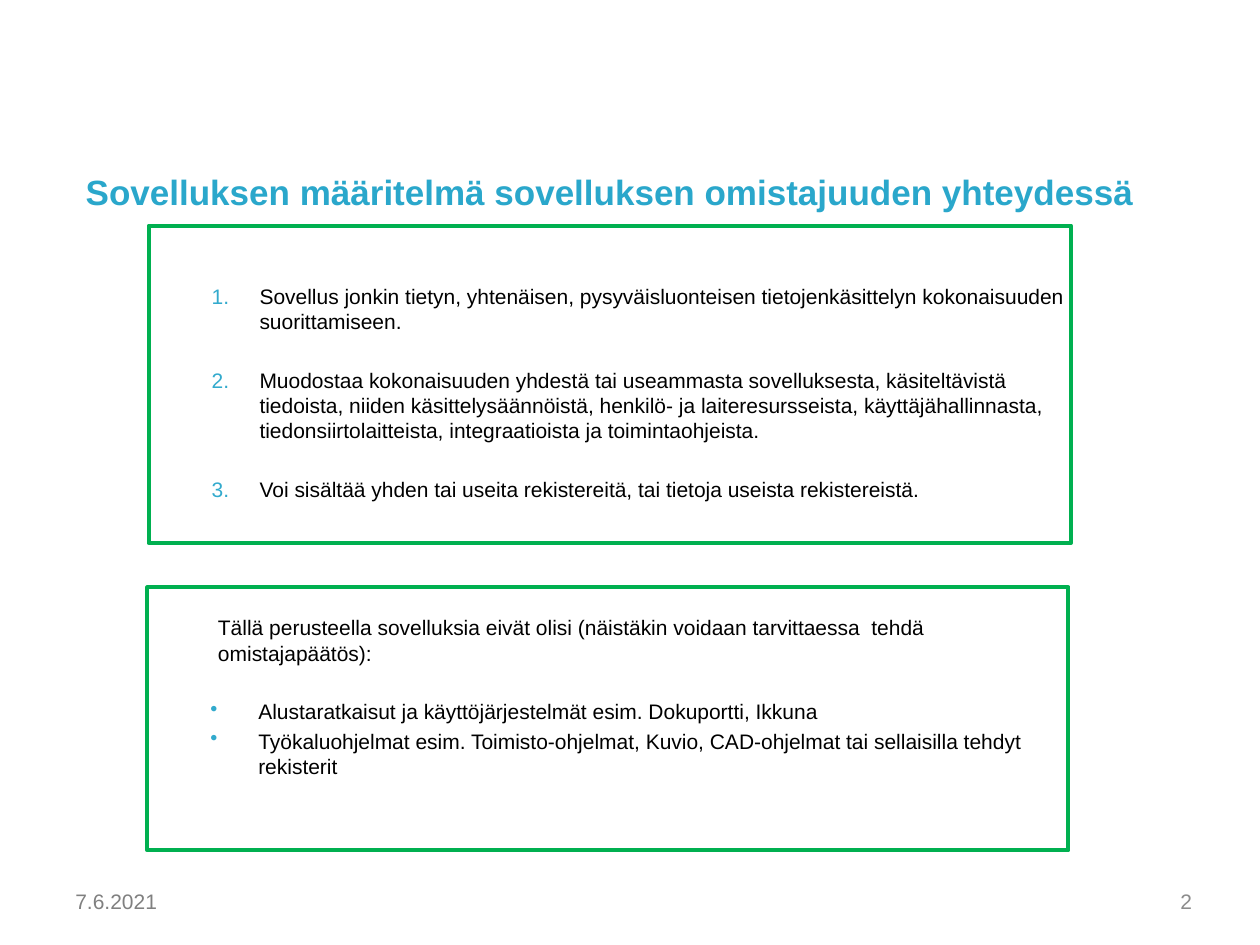
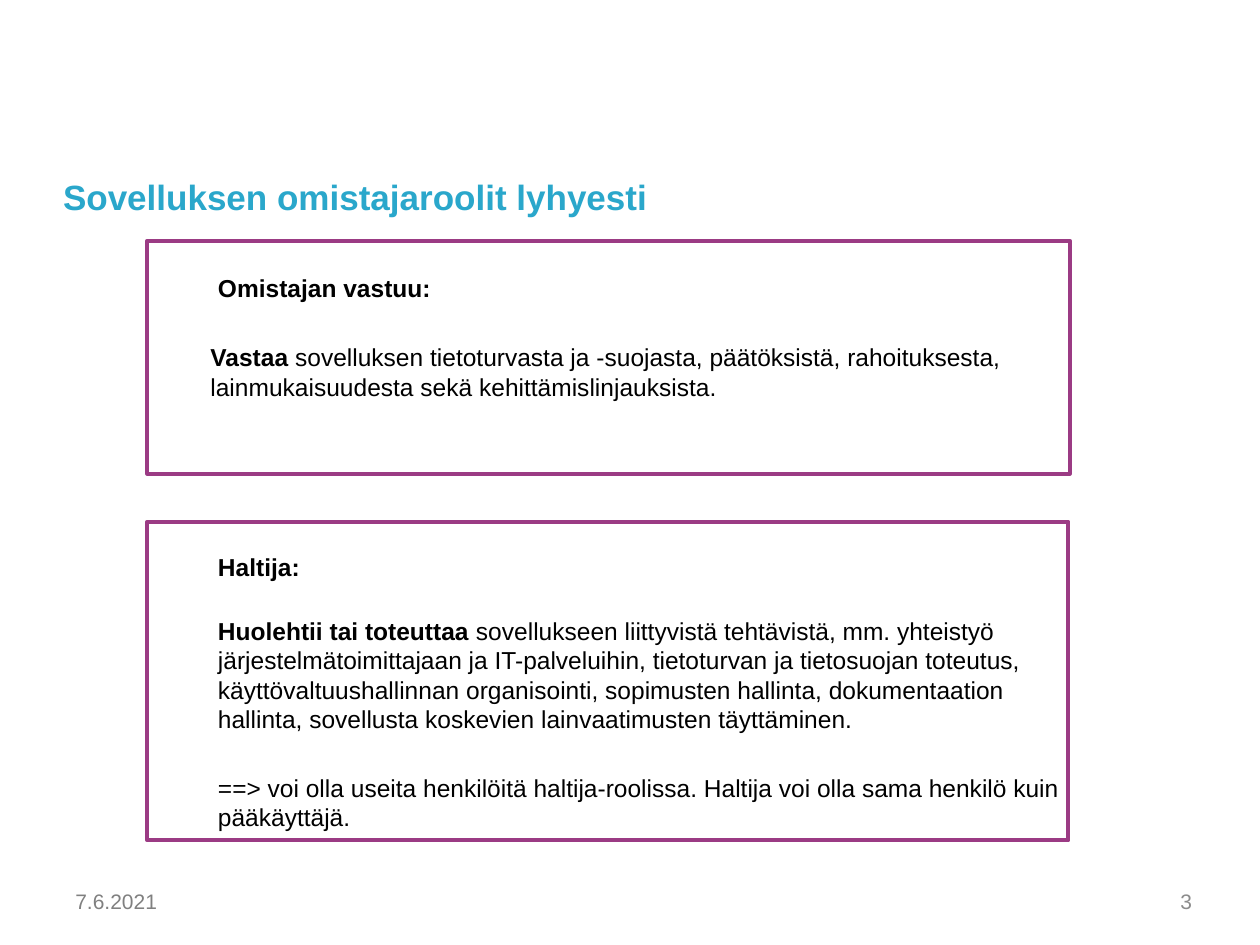
from lxml import etree
from pptx import Presentation
from pptx.dml.color import RGBColor
from pptx.enum.shapes import MSO_SHAPE
from pptx.enum.text import MSO_ANCHOR, MSO_AUTO_SIZE, PP_ALIGN
from pptx.oxml.ns import qn
from pptx.util import Inches, Pt

RECTANGLE = MSO_SHAPE.RECTANGLE
TOP, MIDDLE = MSO_ANCHOR.TOP, MSO_ANCHOR.MIDDLE
LEFT, RIGHT = PP_ALIGN.LEFT, PP_ALIGN.RIGHT
NO_AUTOFIT = MSO_AUTO_SIZE.NONE

TITLE_BLUE = RGBColor(0x2A, 0xA7, 0xCB)
MARKER_BLUE = RGBColor(0x32, 0xAA, 0xCD)
GREEN = RGBColor(0x00, 0xB0, 0x50)
PURPLE = RGBColor(0x9B, 0x3B, 0x84)
BLACK = RGBColor(0x00, 0x00, 0x00)
DATE_GREY = RGBColor(0x80, 0x80, 0x80)
NUMBER_GREY = RGBColor(0x8C, 0x8C, 0x8C)

FONT = "Arial"
DATE = "7.6.2021"

# Marker kinds: element name and its attributes
NUMBERED = ("a:buAutoNum", {"type": "arabicPeriod"})
BULLETED = ("a:buChar", {"char": "•"})
PLAIN = ("a:buNone", {})

# Each paragraph: marker, left indent, space before, runs of (text, bold)
# Each box: position, padding above the text, text size, paragraphs
SLIDES = [
    {
        "number": "2",
        "title": "Sovelluksen määritelmä sovelluksen omistajuuden yhteydessä",
        "title_at": (0.68, 1.35, 8.5, 0.45),
        "frame": GREEN,
        "boxes": [
            ((1.17, 4.66, 7.31, 2.09), 0.22, 12, [
                (PLAIN, 0.56, 0, [("Tällä perusteella sovelluksia eivät olisi (näistäkin voidaan "
                                   "tarvittaessa  tehdä omistajapäätös):", False)]),
                (BULLETED, 0.88, 19.2, [("Alustaratkaisut ja käyttöjärjestelmät esim. "
                                         "Dokuportti, Ikkuna", False)]),
                (BULLETED, 0.88, 2.4, [("Työkaluohjelmat esim. Toimisto-ohjelmat, Kuvio, "
                                        "CAD-ohjelmat tai sellaisilla tehdyt rekisterit", False)]),
            ]),
            ((1.18, 1.79, 7.32, 2.52), 0.46, 12, [
                (NUMBERED, 0.88, 0, [("Sovellus jonkin tietyn, yhtenäisen, pysyväisluonteisen "
                                      "tietojenkäsittelyn kokonaisuuden suorittamiseen.", False)]),
                (NUMBERED, 0.88, 19.2, [("Muodostaa kokonaisuuden yhdestä tai useammasta "
                                         "sovelluksesta, käsiteltävistä tiedoista, niiden "
                                         "käsittelysäännöistä, henkilö- ja laiteresursseista, "
                                         "käyttäjähallinnasta, tiedonsiirtolaitteista, "
                                         "integraatioista ja toimintaohjeista.", False)]),
                (NUMBERED, 0.88, 19.2, [("Voi sisältää yhden tai useita rekistereitä, tai "
                                         "tietoja useista rekistereistä.", False)]),
            ]),
        ],
    },
    {
        "number": "3",
        "title": "Sovelluksen omistajaroolit lyhyesti",
        "title_at": (0.5, 1.39, 8.5, 0.55),
        "frame": PURPLE,
        "boxes": [
            ((1.17, 1.91, 7.32, 1.85), 0.26, 14, [
                (PLAIN, 0.56, 0, [("Omistajan vastuu:", True)]),
                (PLAIN, 0.5, 22.5, [("Vastaa", True),
                                    (" sovelluksen tietoturvasta ja -suojasta, päätöksistä, "
                                     "rahoituksesta, lainmukaisuudesta sekä "
                                     "kehittämislinjauksista.", False)]),
            ]),
            ((1.17, 4.14, 7.31, 2.53), 0.24, 14, [
                (PLAIN, 0.56, 0, [("Haltija:", True)]),
                (PLAIN, 0.56, 19.7, [("Huolehtii tai toteuttaa ", True),
                                     ("sovellukseen liittyvistä tehtävistä, mm. yhteistyö "
                                      "järjestelmätoimittajaan ja IT-palveluihin, tietoturvan ja "
                                      "tietosuojan toteutus, käyttövaltuushallinnan organisointi, "
                                      "sopimusten hallinta, dokumentaation hallinta, sovellusta "
                                      "koskevien lainvaatimusten täyttäminen.", False)]),
                (PLAIN, 0.56, 22.5, [("==> voi olla useita henkilöitä haltija-roolissa. Haltija "
                                      "voi olla sama henkilö kuin pääkäyttäjä.", False)]),
            ]),
        ],
    },
]


def add_run(paragraph, text, size, color, bold=False):
    run = paragraph.add_run()
    run.text = text
    run.font.name = FONT
    run.font.size = Pt(size)
    run.font.bold = bold
    run.font.color.rgb = color


def set_marker(paragraph, marker, indent):
    tag, attributes = marker
    properties = paragraph._p.get_or_add_pPr()
    properties.set("marL", str(Inches(indent)))
    properties.set("indent", str(0 if marker is PLAIN else Inches(-0.38)))
    if marker is not PLAIN:
        marker_color = etree.SubElement(properties, qn("a:buClr"))
        etree.SubElement(marker_color, qn("a:srgbClr"), val=str(MARKER_BLUE))
    etree.SubElement(properties, qn(tag), attributes)


prs = Presentation()
prs.slide_width, prs.slide_height = Inches(10), Inches(7.5)
title_only = prs.slide_layouts[5]

for content in SLIDES:
    slide = prs.slides.add_slide(title_only)

    # Footer: date and slide number
    for text, left, align, color in ((DATE, 0.5, LEFT, DATE_GREY),
                                     (content["number"], 7.23, RIGHT, NUMBER_GREY)):
        footer = slide.shapes.add_textbox(Inches(left), Inches(6.95), Inches(2.33), Inches(0.4))
        footer.text_frame.word_wrap = True
        footer.text_frame.vertical_anchor = MIDDLE
        footer_line = footer.text_frame.paragraphs[0]
        footer_line.alignment = align
        add_run(footer_line, text, 12, color)

    # Title
    title = slide.shapes.title
    title.left, title.top, title.width, title.height = map(Inches, content["title_at"])
    heading = title.text_frame
    heading.auto_size = NO_AUTOFIT
    heading.vertical_anchor = TOP
    heading.margin_left = heading.margin_top = heading.margin_right = heading.margin_bottom = 0
    heading_line = heading.paragraphs[0]
    heading_line.alignment = LEFT
    add_run(heading_line, content["title"], 20, TITLE_BLUE, bold=True)

    # Framed boxes
    for position, padding, size, paragraphs in content["boxes"]:
        box = slide.shapes.add_shape(RECTANGLE, *map(Inches, position))
        box.shadow.inherit = False
        box.fill.background()
        box.line.color.rgb = content["frame"]
        box.line.width = Pt(2.25)
        body = box.text_frame
        body.word_wrap = True
        body.vertical_anchor = TOP
        body.margin_left = body.margin_right = body.margin_bottom = 0
        body.margin_top = Inches(padding)
        for index, (marker, indent, space_before, runs) in enumerate(paragraphs):
            paragraph = body.add_paragraph() if index else body.paragraphs[0]
            set_marker(paragraph, marker, indent)
            paragraph.alignment = LEFT
            paragraph.space_before = Pt(space_before)
            for text, bold in runs:
                add_run(paragraph, text, size, BLACK, bold)

prs.save("out.pptx")
